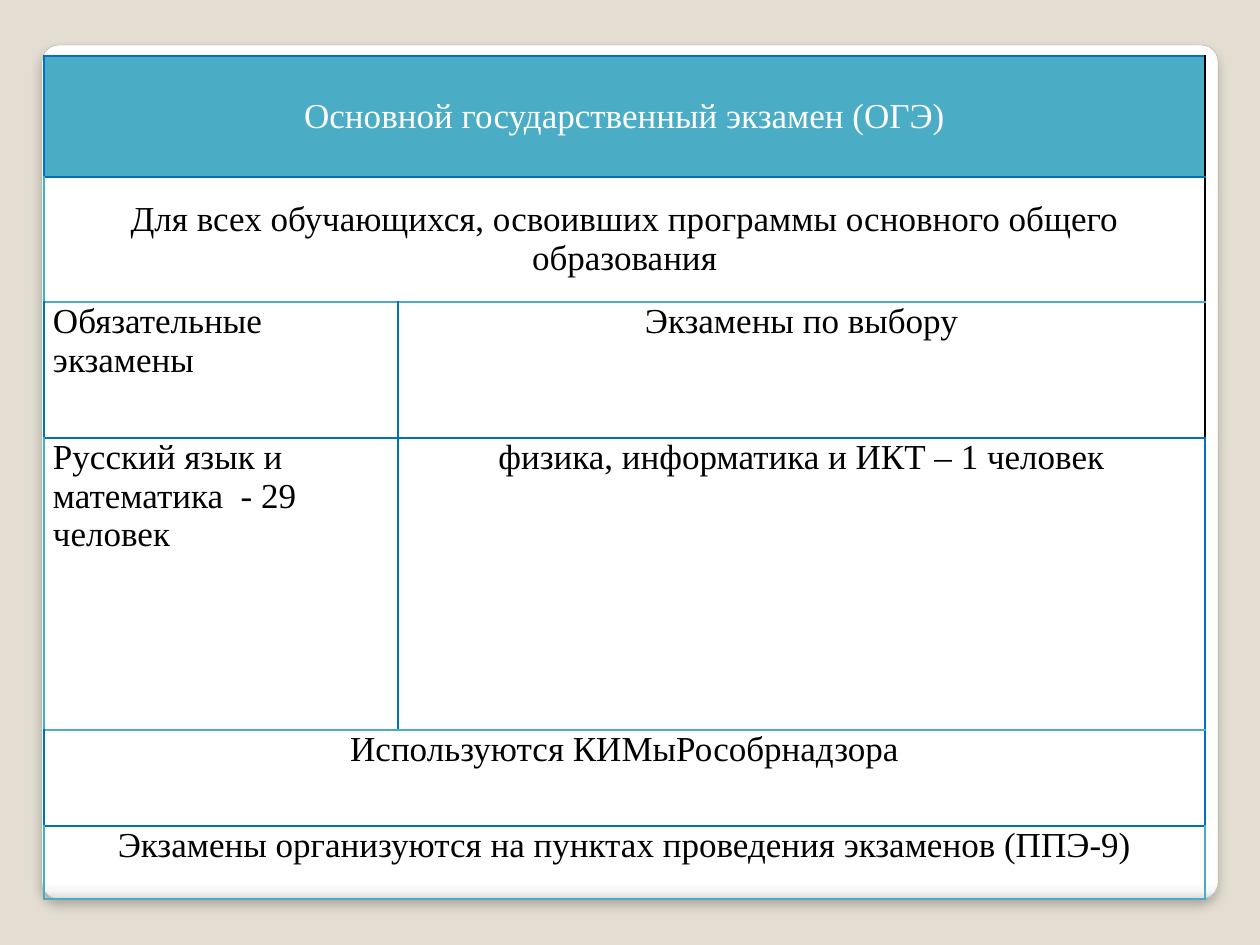
"""Build a slide with a table about the basic state exam."""
import dataclasses

import lxml.etree
import pptx
import pptx.dml.color
import pptx.enum.shapes
import pptx.enum.text
import pptx.oxml
import pptx.oxml.ns
import pptx.util

EMU_PER_INCH = 914400
PX_PER_INCH = 126
CENTER = pptx.enum.text.PP_ALIGN.CENTER
LEFT = pptx.enum.text.PP_ALIGN.LEFT
MIDDLE = pptx.enum.text.MSO_ANCHOR.MIDDLE
TOP = pptx.enum.text.MSO_ANCHOR.TOP


@dataclasses.dataclass(frozen=True)
class Theme:
    """Colours, font and sizes of the slide."""
    backdrop: str = "E3DED1"
    card_line: str = "A4A4A4"
    card_stops: tuple = ((0, "FFFFFF"), (98, "FFFFFF"), (99, "F7F7F7"), (100, "DADADA"))
    teal: str = "4BACC6"
    blue: str = "0070C0"
    black: str = "000000"
    white: str = "FFFFFF"
    font: str = "Times New Roman"
    text_size: int = 20
    border_width: int = 1


THEME = Theme()
T, B, K = THEME.teal, THEME.blue, THEME.black

COLUMNS = (354, 807)
ROW_HEIGHTS = (121, 125, 136, 292, 96, 73)
ROWS = (
    (("Основной государственный экзамен (ОГЭ)", CENTER, MIDDLE, (B, B, K, B)),),
    (("Для всех обучающихся, освоивших программы основного общего образования",
      CENTER, MIDDLE, (T, B, K, T)),),
    (("Обязательные экзамены", LEFT, TOP, (B, T, B, B)),
     ("Экзамены по выбору", CENTER, TOP, (B, T, K, B))),
    (("Русский язык и математика  - 29 человек", LEFT, TOP, (T, B, B, T)),
     ("физика, информатика и ИКТ – 1 человек", CENTER, TOP, (B, B, B, T))),
    (("Используются КИМыРособрнадзора", CENTER, TOP, (B, T, B, B)),),
    (("Экзамены организуются на пунктах проведения экзаменов (ППЭ-9)",
      CENTER, TOP, (T, B, T, T)),),
)


def px(count):
    """Turn pixels into EMU."""
    return pptx.util.Emu(round(count * EMU_PER_INCH / PX_PER_INCH))


def rgb(value):
    """Make a colour from its hex value."""
    return pptx.dml.color.RGBColor.from_string(value)


def parsed(tag, body):
    """Make a drawing element with the given content."""
    namespace = pptx.oxml.ns.nsdecls("a")
    return pptx.oxml.parse_xml(f"<a:{tag} {namespace}>{body}</a:{tag}>")


def add_card(page, left, top, width, height):
    """Add the rounded white panel with its soft shadow."""
    kind = pptx.enum.shapes.MSO_SHAPE.ROUNDED_RECTANGLE
    card = page.shapes.add_shape(kind, px(left), px(top), px(width), px(height))
    card.adjustments[0] = 0.02
    card.shadow.inherit = False
    card.line.color.rgb = rgb(THEME.card_line)
    card.line.width = pptx.util.Pt(0.16)
    card.fill.gradient()
    card.fill.gradient_angle = 270
    stops = card.element.spPr.find(".//" + pptx.oxml.ns.qn("a:gsLst"))
    for stop in list(stops):
        stops.remove(stop)
    for place, colour in THEME.card_stops:
        stop = parsed("gs", f'<a:srgbClr val="{colour}"/>')
        stop.set("pos", str(place * 1000))
        stops.append(stop)
    shadow = parsed("outerShdw", f'<a:srgbClr val="{THEME.black}"><a:alpha val="25000"/></a:srgbClr>')
    settings = {"blurRad": pptx.util.Pt(6), "dist": pptx.util.Pt(4), "dir": 5400000}
    for name, value in settings.items():
        shadow.set(name, str(int(value)))
    card.element.spPr.find(pptx.oxml.ns.qn("a:effectLst")).append(shadow)


def set_borders(cell, colours):
    """Draw the left, top, right and bottom borders of a cell."""
    properties = cell._tc.get_or_add_tcPr()
    for side, colour in sorted(zip("LTRB", colours), key=lambda pair: "LRTB".index(pair[0])):
        line = parsed(f"ln{side}", f'<a:solidFill><a:srgbClr val="{colour}"/></a:solidFill>')
        line.set("w", str(int(pptx.util.Pt(THEME.border_width))))
        properties.append(line)


def style_cell(cell, borders, is_header):
    """Set the borders and the fill of a cell."""
    set_borders(cell, borders)
    if is_header:
        cell.fill.solid()
        cell.fill.fore_color.rgb = rgb(THEME.teal)
    else:
        cell.fill.background()


def write_cell(cell, text, align, anchor, colour):
    """Write one paragraph into a cell."""
    cell.margin_left = cell.margin_right = px(9)
    cell.margin_top = cell.margin_bottom = 0
    cell.vertical_anchor = anchor
    para = cell.text_frame.paragraphs[0]
    para.text = text
    para.alignment = align
    para.font.name = THEME.font
    para.font.size = pptx.util.Pt(THEME.text_size)
    para.font.bold = False
    para.font.color.rgb = rgb(colour)


def add_exam_table(page, left, top):
    """Add the exam table, merging rows that hold one text."""
    frame = page.shapes.add_table(len(ROWS), len(COLUMNS), px(left), px(top),
                                  px(sum(COLUMNS)), px(sum(ROW_HEIGHTS)))
    table = frame.table
    table.horz_banding = False
    for column, width in zip(table.columns, COLUMNS):
        column.width = px(width)
    for index, (entries, height) in enumerate(zip(ROWS, ROW_HEIGHTS)):
        table.rows[index].height = px(height)
        cells = [table.cell(index, number) for number in range(len(COLUMNS))]
        is_header = index == 0
        for number, cell in enumerate(cells):
            style_cell(cell, entries[min(number, len(entries) - 1)][3], is_header)
        if len(entries) == 1:
            cells[0].merge(cells[-1])
        for cell, (text, align, anchor, _) in zip(cells, entries):
            write_cell(cell, text, align, anchor, THEME.white if is_header else THEME.black)


def main():
    """Build and save the deck."""
    deck = pptx.Presentation()
    deck.slide_width, deck.slide_height = px(1260), px(945)
    page = deck.slides.add_slide(deck.slide_layouts[6])
    page.background.fill.solid()
    page.background.fill.fore_color.rgb = rgb(THEME.backdrop)
    add_card(page, 42, 45, 1176, 854)
    add_exam_table(page, 44, 56)
    deck.save("out.pptx")


if __name__ == "__main__":
    main()
